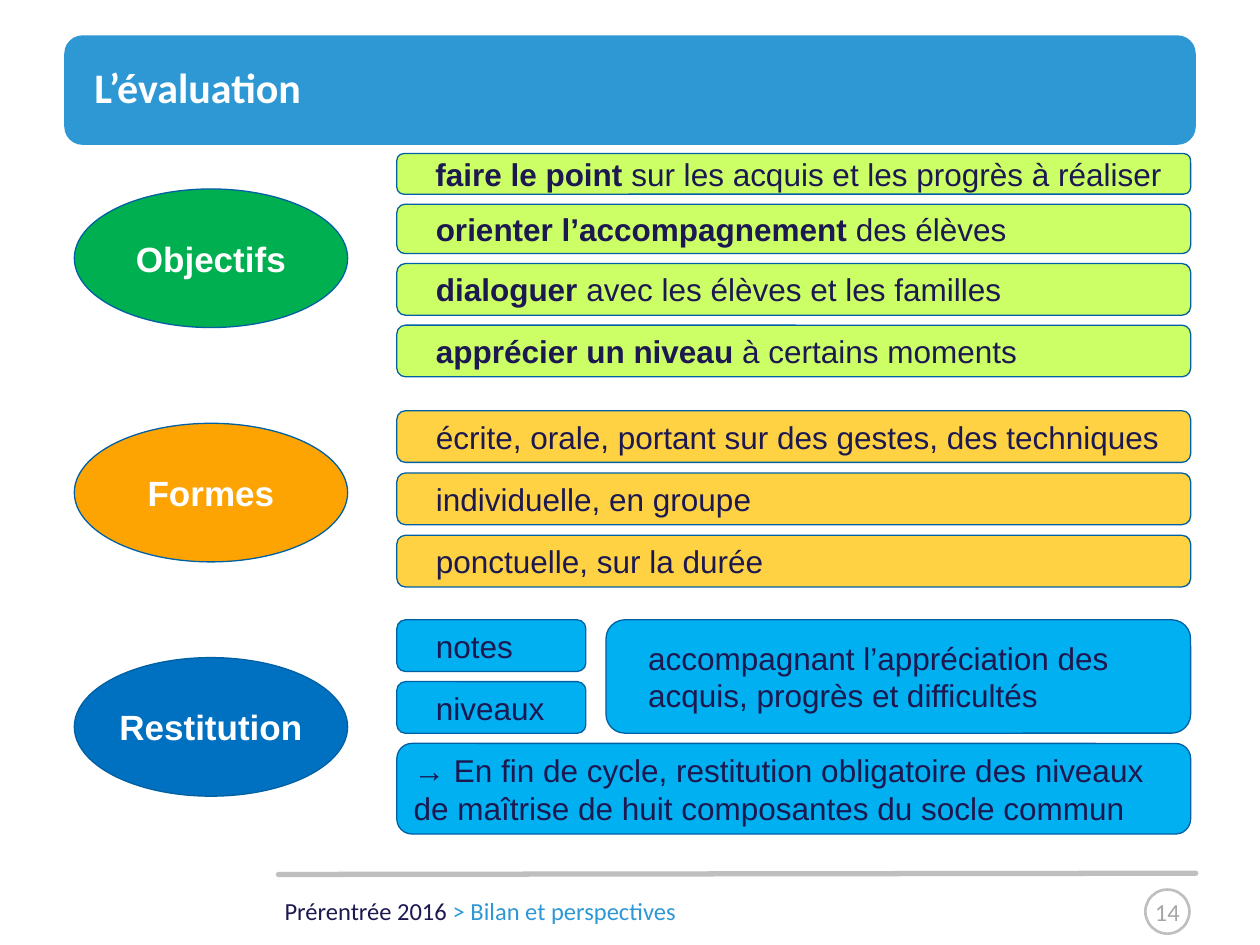
from lxml import etree
from pptx import Presentation
from pptx.dml.color import RGBColor
from pptx.enum import shapes as sh, text as tx
from pptx.oxml.ns import qn
from pptx.util import Pt

INK, EDGE, BLUE, GREY = "1C1850", "0060A4", "2E98D5", "BFBFBF"
ROUND, OVAL = sh.MSO_SHAPE.ROUNDED_RECTANGLE, sh.MSO_SHAPE.OVAL
LEFT, CENTER = tx.PP_ALIGN.LEFT, tx.PP_ALIGN.CENTER
MIDDLE, TOP = tx.MSO_ANCHOR.MIDDLE, tx.MSO_ANCHOR.TOP
BAR_X, BAR_W, BAR_H = 226.8, 453.6, 29.5
INDENT = 20.9


def paint(target, color):
    target.solid()
    target.fore_color.rgb = RGBColor.from_string(color)


def write(shape, runs, size, font="Arial", align=LEFT, anchor=MIDDLE,
          left=7.2, right=7.2, edge=3.6):
    frame = shape.text_frame
    frame.word_wrap = True
    frame.vertical_anchor = anchor
    frame.margin_left, frame.margin_right = Pt(left), Pt(right)
    frame.margin_top = frame.margin_bottom = Pt(edge)
    para = frame.paragraphs[0]
    para.alignment = align
    for words, color, bold in runs:
        run = para.add_run()
        run.text = words
        run.font.name, run.font.size, run.font.bold = font, Pt(size), bold
        paint(run.font.fill, color)


def add_form(slide, kind, box, fill=None, line=EDGE, width=0.75):
    shape = slide.shapes.add_shape(kind, *map(Pt, box))
    shape.shadow.inherit = False
    if fill:
        paint(shape.fill, fill)
    else:
        shape.fill.background()
    if line:
        paint(shape.line.fill, line)
        shape.line.width = Pt(width)
    else:
        shape.line.fill.background()
    return shape


def add_label(slide, box, runs, size, **style):
    label = slide.shapes.add_textbox(*map(Pt, box))
    write(label, runs, size, font="Calibri", **style)


def add_rule(slide, start, end):
    rule = slide.shapes.add_connector(
        sh.MSO_CONNECTOR.STRAIGHT, *map(Pt, start + end))
    paint(rule.line.fill, GREY)
    rule.line.width = Pt(3)
    rule.line._get_or_add_ln().set("cap", "rnd")
    etree.SubElement(rule._element.spPr, qn("a:effectLst"))


def add_topic(slide, top, name, color, pad=7.2):
    oval = add_form(slide, OVAL, (42.5, top, 156.2, 79.2), color)
    write(oval, [(name, "FFFFFF", True)], 20,
          align=CENTER, left=pad, right=pad)


def add_bar(slide, box, fill, bold, plain, left=INDENT):
    bar = add_form(slide, ROUND, box, fill)
    runs = [(bold, INK, True), (plain, INK, False)]
    write(bar, [run for run in runs if run[0]], 18, left=left)


def add_stack(slide, top, gap, fill, rows, width=BAR_W):
    for bold, plain, high in rows:
        add_bar(slide, (BAR_X, top, width, high), fill, bold, plain)
        top += high + gap


def add_frame(slide):
    add_form(slide, ROUND, (36.7, 20.2, 646.6, 62.6), BLUE, None)
    add_label(slide, (54, 13, 629.3, 73.4), [("L’évaluation", "FFFFFF", True)],
              24, left=0, right=0, edge=0)
    add_label(slide, (155.5, 508.3, 425.5, 24.5),
              [("Prérentrée 2016 ", INK, False),
               ("> Bilan et perspectives", BLUE, False)], 14, anchor=TOP)
    add_rule(slide, (159.1, 499.7), (683.3, 499))
    badge = add_form(slide, OVAL, (654.5, 508.3, 25.2, 25.2), None, GREY, 1.5)
    write(badge, [("14", "A6A6A6", False)], 14, "Calibri", CENTER,
          left=0, right=0)


def main():
    deck = Presentation()
    deck.slide_width, deck.slide_height = Pt(720), Pt(540)
    slide = deck.slides.add_slide(deck.slide_layouts[6])
    add_frame(slide)

    add_topic(slide, 108, "Objectifs", "00B050")
    add_stack(slide, 87.8, 5.7, "CCFF66", [
        ("faire le point", " sur les acquis et les progrès à réaliser", 23.2),
        ("orienter l’accompagnement", " des élèves", 28.2),
        ("dialoguer", " avec les élèves et les familles", BAR_H),
        ("apprécier un niveau", " à certains moments", BAR_H)])

    add_topic(slide, 241.9, "Formes", "FDA403")
    add_stack(slide, 234.7, 6.1, "FFD243", [
        ("", "écrite, orale, portant sur des gestes, des techniques", BAR_H),
        ("", "individuelle, en groupe", BAR_H),
        ("", "ponctuelle, sur la durée", BAR_H)])

    sky = "00B0F0"
    add_topic(slide, 375.8, "Restitution", "0070C0", 0)
    add_stack(slide, 354.2, 5.8, sky,
              [("", "notes", BAR_H), ("", "niveaux", BAR_H)], 108)
    add_bar(slide, (BAR_X, 424.8, BAR_W, 51.8), sky, "",
            "→ En fin de cycle, restitution obligatoire des niveaux "
            "de maîtrise de huit composantes du socle commun", 7.2)
    add_bar(slide, (346.3, 354.2, 334.1, 64.8), sky, "",
            "accompagnant l’appréciation des acquis, progrès et difficultés")
    deck.save("out.pptx")


if __name__ == "__main__":
    main()
